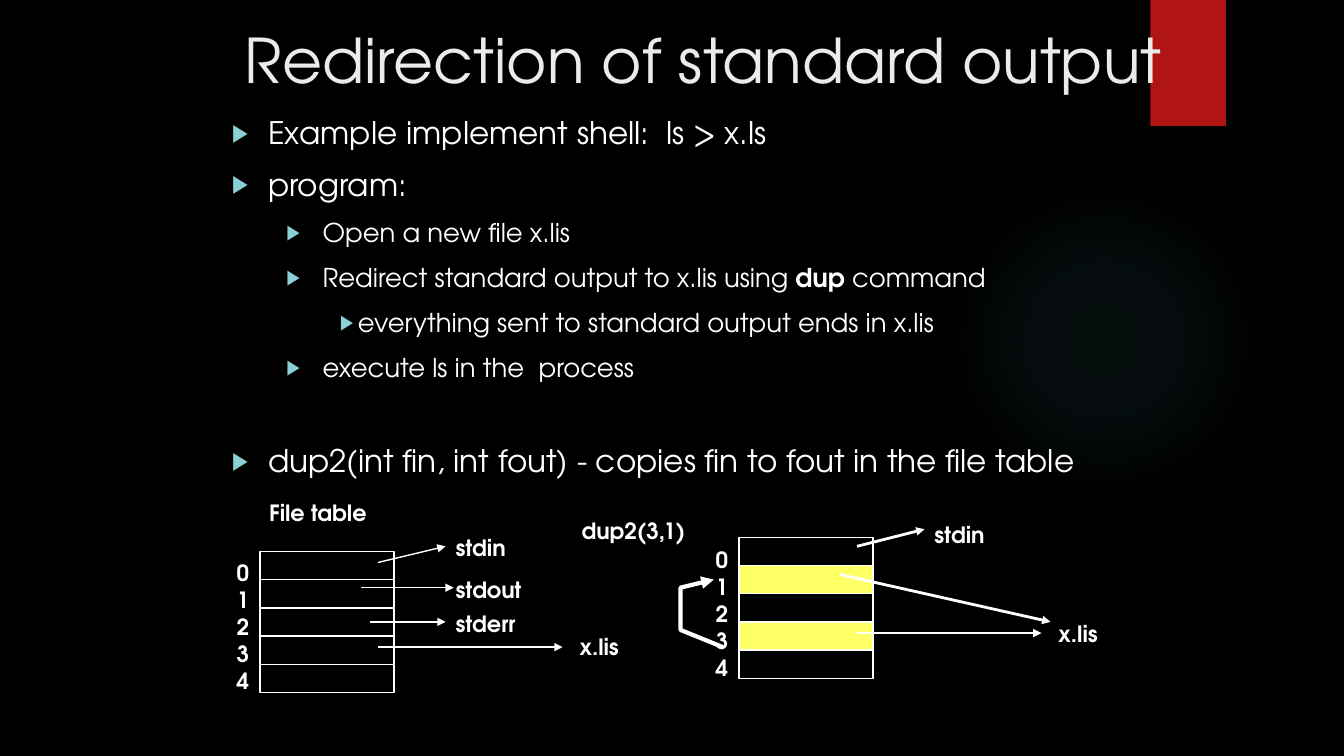
from dataclasses import dataclass

from lxml.etree import SubElement
from pptx import Presentation
from pptx.dml.color import RGBColor
from pptx.enum.shapes import MSO_CONNECTOR as Connector, MSO_SHAPE as Preset
from pptx.enum.text import MSO_ANCHOR as Anchor, MSO_AUTO_SIZE as AutoSize, PP_ALIGN as Align
from pptx.oxml import parse_xml
from pptx.oxml.ns import nsdecls, qn
from pptx.util import Emu, Pt

PX = 9144
FONT = "TeX Gyre Adventor"
WHITE, BLACK, YELLOW = "FFFFFF", "000000", "FFFF66"
RED, TITLE_GREY, BULLET, GLOW = "B01513", "EBEBEB", "8AD0D6", "50B9C1"
ROW_WIDTH, ROW_HEIGHT, ROW_COUNT = 133, 28, 5


@dataclass(frozen=True)
class Level:
    margin: int
    hanging: int
    size: float


@dataclass(frozen=True)
class Item:
    level: int
    texts: tuple[str, ...]
    before: float = 10


@dataclass(frozen=True)
class FileTable:
    left: int
    top: int
    numbers_top: int
    copied_rows: tuple[int, ...] = ()


@dataclass(frozen=True)
class Label:
    text: str
    left: int
    top: int
    width: int


@dataclass(frozen=True)
class Arrow:
    start: tuple[int, int]
    end: tuple[int, int]
    weight: float


LEVELS = (Level(36, 36, 22.2), Level(90, 36, 18.5), Level(125, 18, 18.5))
ITEMS = (
    Item(0, ("Example implement shell:  ls > x.ls",), 0),
    Item(0, ("program:",)),
    Item(1, ("Open a new file x.lis",)),
    Item(1, ("Redirect standard output to x.lis using ", "dup", " command")),
    Item(2, ("everything sent to standard output ends in x.lis",)),
    Item(1, ("execute ls in the  process",)),
    Item(0, ("dup2(int fin, int fout) - copies fin to fout in the file table",), 42),
)
FILE_TABLES = (FileTable(258, 547, 550), FileTable(733, 533, 537, (1, 3)))
LABELS = (
    Label("File table", 257, 490, 119),
    Label("stdin", 442, 525, 73),
    Label("stdout", 442, 567, 88),
    Label("stderr", 442, 600, 83),
    Label("x.lis", 565, 623, 60),
    Label("dup2(3,1)", 567, 508, 125),
    Label("stdin", 917, 512, 73),
    Label("x.lis", 1040, 610, 60),
)
ARROWS = (
    Arrow((375, 558), (442, 542), 1),
    Arrow((358, 583), (450, 583), 1),
    Arrow((367, 617), (442, 617), 1),
    Arrow((375, 642), (558, 642), 1),
    Arrow((850, 542), (917, 525), 2),
    Arrow((833, 570), (1042, 617), 2),
    Arrow((850, 628), (1033, 628), 2),
)
COPY_ROUTE = ((717, 642), (675, 625), (675, 583), (708, 575))


def px(*lengths: int) -> list[Emu]:
    return [Emu(length * PX) for length in lengths]


def color(value: str) -> RGBColor:
    return RGBColor.from_string(value)


def add_run(paragraph, text: str, *, size: float, fill: str = WHITE, bold: bool = False) -> None:
    run = paragraph.add_run()
    run.text = text
    run.font.name = FONT
    run.font.size = Pt(size)
    run.font.bold = bold
    run.font.color.rgb = color(fill)


def place(placeholder, left: int, top: int, width: int, height: int):
    placeholder.left, placeholder.top, placeholder.width, placeholder.height = px(left, top, width, height)
    frame = placeholder.text_frame
    frame.word_wrap = True
    frame.auto_size = AutoSize.NONE
    frame.vertical_anchor = Anchor.TOP
    return frame


def add_box(slide, preset: Preset, left: int, top: int, width: int, height: int,
            fill: str | None = None, line: str | None = None):
    shape = slide.shapes.add_shape(preset, *px(left, top, width, height))
    shape.shadow.inherit = False
    if fill:
        shape.fill.solid()
        shape.fill.fore_color.rgb = color(fill)
    if line:
        shape.line.color.rgb = color(line)
        shape.line.width = Pt(1)
    else:
        shape.line.fill.background()
    return shape


def add_backdrop(slide) -> None:
    glow = add_box(slide, Preset.OVAL, 941, 183, 308, 308)
    stops = "".join(
        f'<a:gs pos="{position * 1000}"><a:srgbClr val="{GLOW}"><a:alpha val="{alpha * 1000}"/></a:srgbClr></a:gs>'
        for position, alpha in ((0, 7), (36, 6), (69, 0))
    )
    glow._element.spPr.insert(2, parse_xml(
        f'<a:gradFill {nsdecls("a")}><a:gsLst>{stops}</a:gsLst><a:path path="circle">'
        '<a:fillToRect l="50000" t="50000" r="50000" b="50000"/></a:path></a:gradFill>'))
    ribbon = add_box(slide, Preset.RECTANGLE, 1141, 0, 75, 125, RED)
    ribbon._element.spPr.find(qn("a:effectLst")).append(parse_xml(
        f'<a:outerShdw {nsdecls("a")} blurRad="38100" dist="25400" dir="5400000" rotWithShape="0">'
        f'<a:srgbClr val="{BLACK}"><a:alpha val="45000"/></a:srgbClr></a:outerShdw>'))
    for index, shape in enumerate((glow, ribbon), start=2):
        slide.shapes._spTree.insert(index, shape._element)


def add_item(paragraph, item: Item) -> None:
    level = LEVELS[item.level]
    paragraph.level = item.level
    paragraph.alignment = Align.LEFT
    properties = paragraph._p.get_or_add_pPr()
    properties.set("marL", str(level.margin * PX))
    properties.set("indent", str(-level.hanging * PX))
    SubElement(SubElement(properties, qn("a:buClr")), qn("a:srgbClr"), val=BULLET)
    SubElement(properties, qn("a:buSzPct"), val="80000")
    SubElement(properties, qn("a:buChar"), char="▶")
    paragraph.space_before = Pt(item.before)
    for index, text in enumerate(item.texts):
        add_run(paragraph, text, size=level.size, bold=index == 1)


def add_label(slide, lines: list[str], left: int, top: int, width: int, height: int) -> None:
    frame = slide.shapes.add_textbox(*px(left, top, width, height)).text_frame
    frame.word_wrap = False
    frame.auto_size = AutoSize.SHAPE_TO_FIT_TEXT
    for index, line in enumerate(lines):
        paragraph = frame.add_paragraph() if index else frame.paragraphs[0]
        add_run(paragraph, line, size=16, bold=True)


def add_file_table(slide, table: FileTable) -> None:
    for row in range(ROW_COUNT):
        fill = YELLOW if row in table.copied_rows else BLACK
        add_box(slide, Preset.RECTANGLE, table.left, table.top + row * ROW_HEIGHT,
                ROW_WIDTH, ROW_HEIGHT, fill, WHITE)
    add_label(slide, [str(row) for row in range(ROW_COUNT)], table.left - 33, table.numbers_top, 33, 145)


def style_arrow(shape, weight: float) -> None:
    shape.line.color.rgb = color(WHITE)
    shape.line.width = Pt(weight)
    SubElement(shape.line._get_or_add_ln(), qn("a:tailEnd"), type="triangle")


def add_arrow(slide, arrow: Arrow) -> None:
    connector = slide.shapes.add_connector(Connector.STRAIGHT, *px(*arrow.start, *arrow.end))
    style_arrow(connector, arrow.weight)
    SubElement(connector._element.spPr, qn("a:effectLst"))


def main() -> None:
    presentation = Presentation()
    presentation.slide_width, presentation.slide_height = px(1333, 750)
    slide = presentation.slides.add_slide(presentation.slide_layouts[1])
    slide.background.fill.solid()
    slide.background.fill.fore_color.rgb = color(BLACK)
    add_backdrop(slide)

    title = place(slide.shapes.title, 233, 17, 933, 121).paragraphs[0]
    title.alignment = Align.LEFT
    add_run(title, "Redirection of standard output", size=44, fill=TITLE_GREY)
    body = place(slide.placeholders[1], 220, 108, 892, 360)
    for index, item in enumerate(ITEMS):
        add_item(body.add_paragraph() if index else body.paragraphs[0], item)

    for table in FILE_TABLES:
        add_file_table(slide, table)
    for label in LABELS:
        add_label(slide, [label.text], label.left, label.top, label.width, 37)
    for arrow in ARROWS:
        add_arrow(slide, arrow)

    builder = slide.shapes.build_freeform(*COPY_ROUTE[0], scale=PX)
    builder.add_line_segments(COPY_ROUTE[1:], close=False)
    copy_arrow = builder.convert_to_shape()
    copy_arrow.shadow.inherit = False
    copy_arrow.fill.background()
    style_arrow(copy_arrow, 3)
    presentation.save("out.pptx")


if __name__ == "__main__":
    main()
